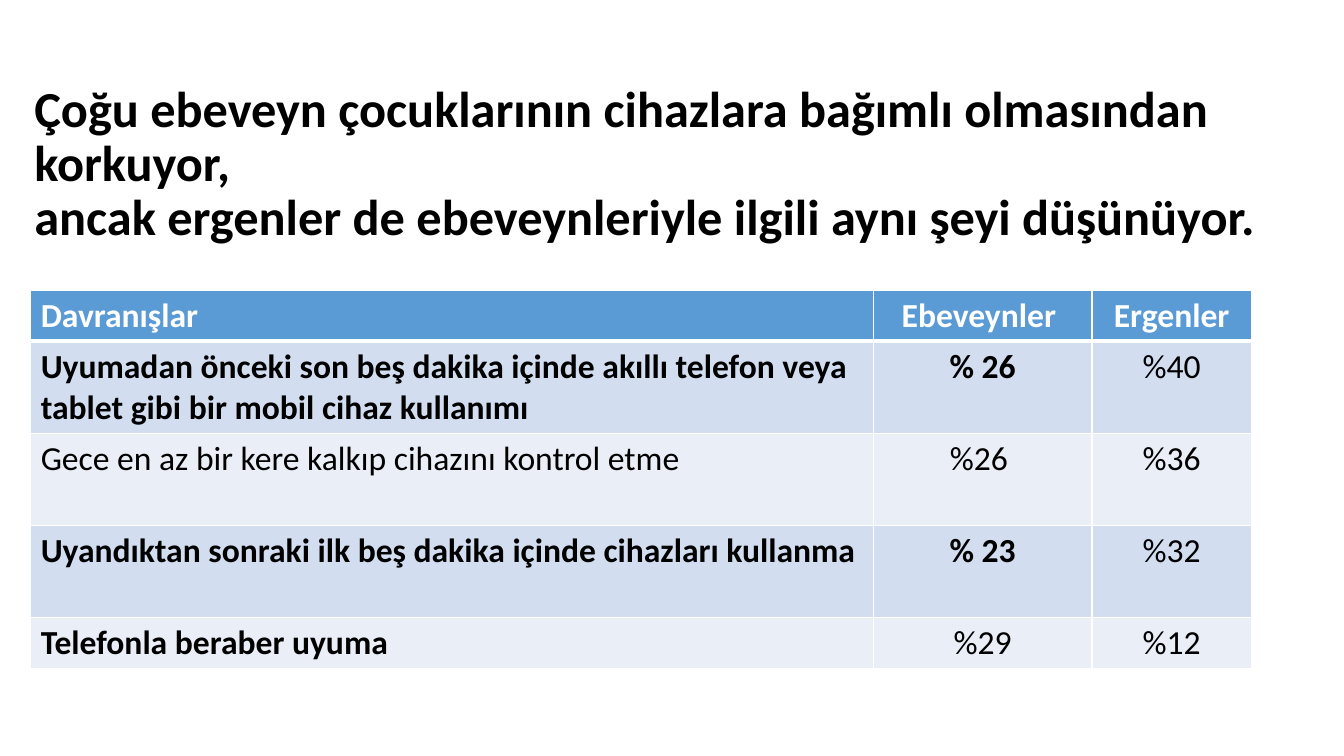
"""Builds a slide comparing the device habits of parents and teenagers."""
import lxml.etree
import pptx
import pptx.dml.color
import pptx.enum.text
import pptx.oxml.ns
import pptx.util

Pt = pptx.util.Pt
ALIGN = pptx.enum.text.PP_ALIGN
ANCHOR = pptx.enum.text.MSO_ANCHOR

FONT = "Calibri"
BLACK, WHITE = "000000", "FFFFFF"
HEADER_FILL = "5B9BD5"
BAND_FILLS = ("D2DEEF", "EAEFF7")

HEADLINE = (
    "Çoğu ebeveyn çocuklarının cihazlara bağımlı olmasından korkuyor, \n"
    "ancak ergenler de ebeveynleriyle ilgili aynı şeyi düşünüyor."
)
HABITS = (
    ("Davranışlar", "Ebeveynler ", "Ergenler"),
    ("Uyumadan önceki son beş dakika içinde akıllı telefon veya "
     "tablet gibi bir mobil cihaz kullanımı", "% 26", "%40"),
    ("Gece en az bir kere kalkıp cihazını kontrol etme", "%26 ", "%36"),
    ("Uyandıktan sonraki ilk beş dakika içinde cihazları kullanma", "% 23", "%32"),
    ("Telefonla beraber uyuma", "%29", "%12"),
)
BOLD_CELLS = {(0, 0), (0, 1), (0, 2), (1, 0), (1, 1), (3, 0), (3, 1), (4, 0)}
COLUMN_WIDTHS = (601.9, 156.2, 113.8)
ROW_HEIGHTS = (36.5, 65.8, 65.8, 65.8, 36.5)


def rgb(value):
    return pptx.dml.color.RGBColor.from_string(value)


def apply_format(target, values):
    for name, value in values.items():
        setattr(target, name, value)


def write_text(frame, text, colour, paragraph_format, font_format):
    frame.text = text
    for paragraph in frame.paragraphs:
        apply_format(paragraph, paragraph_format)
        for run in paragraph.runs:
            apply_format(run.font, {"name": FONT, **font_format})
            run.font.color.rgb = rgb(colour)


def add_border(cell, side, width):
    properties = cell._tc.get_or_add_tcPr()
    qn = pptx.oxml.ns.qn
    line = lxml.etree.SubElement(properties, qn(f"a:ln{side}"), w=str(Pt(width)))
    fill = lxml.etree.SubElement(line, qn("a:solidFill"))
    lxml.etree.SubElement(fill, qn("a:srgbClr"), val=WHITE)


def add_headline(slide):
    headline = slide.shapes.title
    apply_format(headline, {"left": Pt(17.3), "top": Pt(41), "width": Pt(927.4), "height": Pt(154)})
    apply_format(headline.text_frame, {
        "word_wrap": True,
        "auto_size": pptx.enum.text.MSO_AUTO_SIZE.NONE,
        "vertical_anchor": ANCHOR.MIDDLE,
    })
    write_text(headline.text_frame, HEADLINE, BLACK,
               {"alignment": ALIGN.LEFT, "line_spacing": 0.9, "space_before": Pt(0)},
               {"size": Pt(36), "bold": True})


def format_cell(cell, row, column, text):
    is_header = row == 0
    write_text(cell.text_frame, text, WHITE if is_header else BLACK,
               {"alignment": ALIGN.CENTER if column else ALIGN.LEFT},
               {"size": Pt(24), "bold": (row, column) in BOLD_CELLS})
    widths = {"L": 1, "R": 1, "T": 3 if row == 1 else 1, "B": 3 if is_header else 1}
    for side, width in widths.items():
        add_border(cell, side, width)
    cell.fill.solid()
    cell.fill.fore_color.rgb = rgb(HEADER_FILL if is_header else BAND_FILLS[(row - 1) % 2])


def add_habits_table(slide):
    habits = slide.shapes.add_table(
        len(HABITS), len(COLUMN_WIDTHS), Pt(21.9), Pt(207.2),
        Pt(sum(COLUMN_WIDTHS)), Pt(sum(ROW_HEIGHTS))).table
    for column, width in zip(habits.columns, COLUMN_WIDTHS):
        column.width = Pt(width)
    for row, height in zip(habits.rows, ROW_HEIGHTS):
        row.height = Pt(height)
    for row, texts in enumerate(HABITS):
        for column, text in enumerate(texts):
            format_cell(habits.cell(row, column), row, column, text)


def main():
    deck = pptx.Presentation()
    apply_format(deck, {"slide_width": Pt(960), "slide_height": Pt(540)})
    slide = deck.slides.add_slide(deck.slide_layouts.get_by_name("Title Only"))
    add_headline(slide)
    add_habits_table(slide)
    deck.save("out.pptx")


if __name__ == "__main__":
    main()
